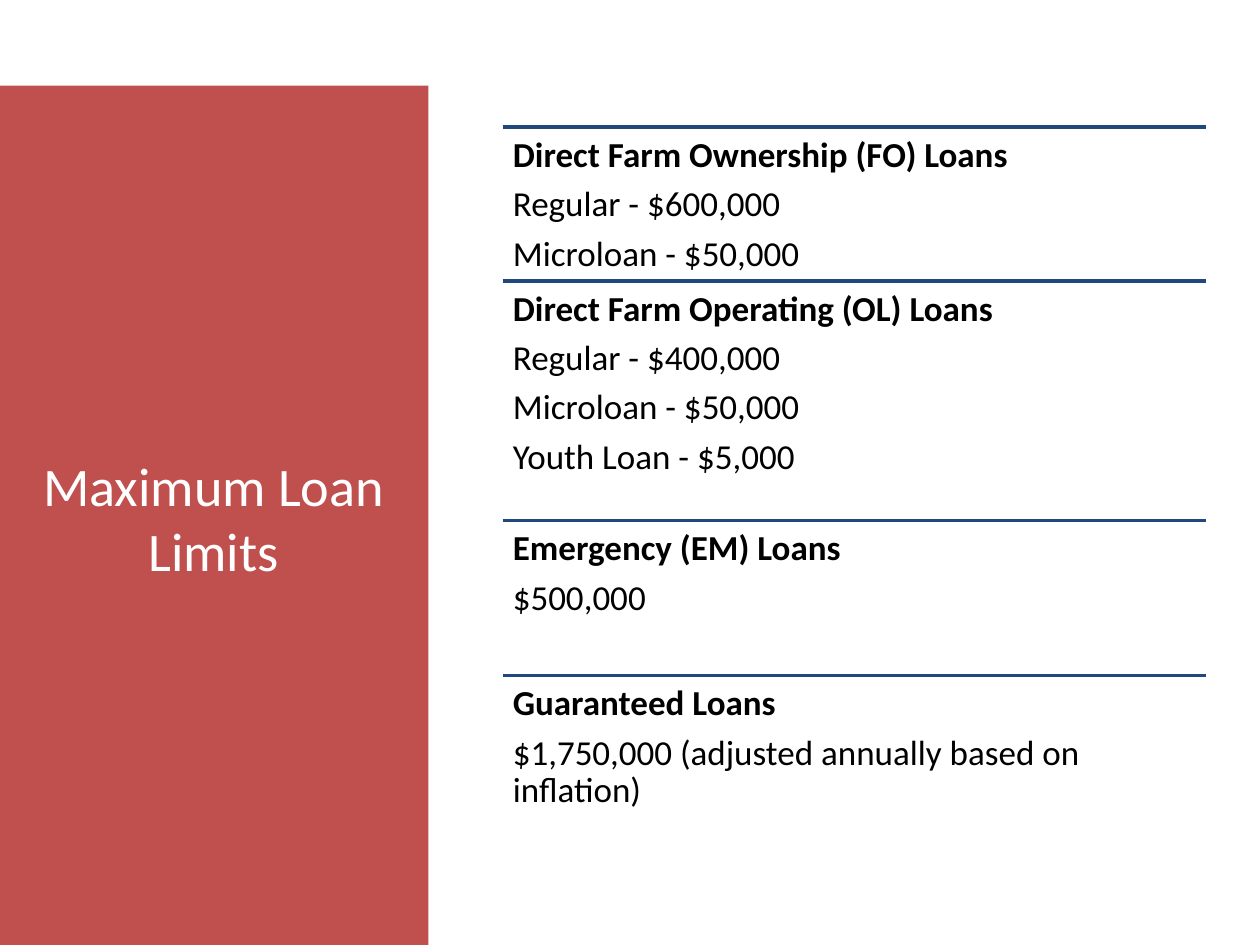
import pptx
import pptx.dml.color
import pptx.enum.shapes
import pptx.enum.text
import pptx.oxml.ns
import pptx.util
from lxml import etree

Inches = pptx.util.Inches
Pt = pptx.util.Pt

LIST_LEFT, LIST_WIDTH = 3.99, 5.58

# top, height, heading, limits
LOANS = [
    (1.01, 1.23, "Direct Farm Ownership (FO) Loans",
     ["Regular - $600,000", "Microloan - $50,000"]),
    (2.23, 1.9, "Direct Farm Operating (OL) Loans",
     ["Regular - $400,000", "Microloan - $50,000", "Youth Loan - $5,000"]),
    (4.13, 1.23, "Emergency (EM) Loans", ["$500,000"]),
    (5.36, 1.82, "Guaranteed Loans",
     ["$1,750,000 (adjusted annually based on inflation)"]),
]


def color(hex_string):
    return pptx.dml.color.RGBColor.from_string(hex_string)


def set_all(target, values):
    for name, value in values.items():
        setattr(target, name, value)


class LoanSlide:
    FONT = "Calibri"
    PANEL, RULE, INK, WHITE = "C0504D", "1F497D", "000000", "FFFFFF"

    def __init__(self, presentation):
        title_only = presentation.slide_layouts[5]
        self.slide = presentation.slides.add_slide(title_only)

    def style(self, paragraph, size, ink, bold=False):
        set_all(paragraph.font, {"name": self.FONT, "size": Pt(size), "bold": bold})
        paragraph.font.color.rgb = color(ink)

    def title_panel(self, text, left, top, width, height):
        panel = self.slide.shapes.title
        set_all(panel, {"left": Inches(left), "top": Inches(top),
                        "width": Inches(width), "height": Inches(height)})
        panel.fill.solid()
        panel.fill.fore_color.rgb = color(self.PANEL)
        set_all(panel.text_frame, {
            "text": text,
            "word_wrap": True,
            "auto_size": pptx.enum.text.MSO_AUTO_SIZE.NONE,
            "vertical_anchor": pptx.enum.text.MSO_ANCHOR.MIDDLE,
        })
        heading = panel.text_frame.paragraphs[0]
        heading.alignment = pptx.enum.text.PP_ALIGN.CENTER
        self.style(heading, 31, self.WHITE)

    def rule(self, left, top, width):
        rule = self.slide.shapes.add_connector(
            pptx.enum.shapes.MSO_CONNECTOR.STRAIGHT,
            Inches(left), Inches(top), Inches(left + width), Inches(top))
        rule.line.color.rgb = color(self.RULE)
        rule.line.width = Pt(2)
        etree.SubElement(rule._element.spPr, pptx.oxml.ns.qn("a:effectLst"))

    def loan_text(self, heading, limits, left, top, width, height):
        box = self.slide.shapes.add_textbox(
            Inches(left), Inches(top), Inches(width), Inches(height))
        frame = box.text_frame
        frame.word_wrap = True
        margins = ("margin_left", "margin_top", "margin_right", "margin_bottom")
        set_all(frame, dict.fromkeys(margins, Inches(0.08)))
        frame.text = "\n".join([heading, *limits])
        for number, paragraph in enumerate(frame.paragraphs):
            set_all(paragraph, {"line_spacing": 0.9, "space_after": Pt(6.6)})
            self.style(paragraph, 20, self.INK, bold=number == 0)


def main():
    presentation = pptx.Presentation()
    set_all(presentation, {"slide_width": Inches(10), "slide_height": Inches(7.5)})
    limits_slide = LoanSlide(presentation)
    limits_slide.title_panel("Maximum Loan Limits", -0.01, 0.68, 3.41, 6.85)
    for top, height, heading, limits in LOANS:
        limits_slide.rule(LIST_LEFT, top, LIST_WIDTH)
        limits_slide.loan_text(heading, limits, LIST_LEFT, top, LIST_WIDTH, height)
    presentation.save("out.pptx")


if __name__ == "__main__":
    main()
